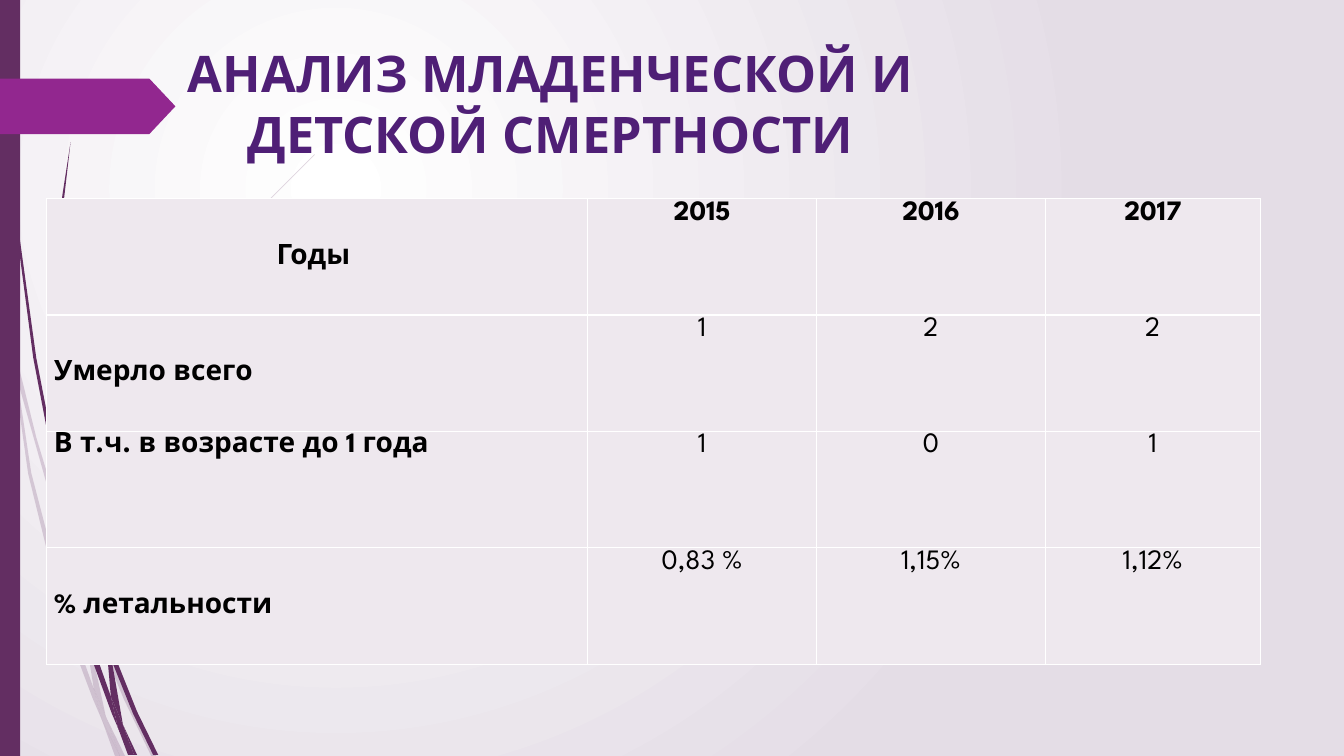
from dataclasses import dataclass

from lxml import etree
from pptx import Presentation
from pptx import util as u
from pptx.dml import color as col
from pptx.enum import shapes, text
from pptx.oxml import ns

Point = tuple[float, float]


@dataclass(frozen=True)
class Theme:
    font: str = "League Spartan"
    plum: str = "632E62"
    tag: str = "92278F"
    title: str = "4F1F76"
    ink: str = "000000"
    cell: str = "EEE8EE"
    white: str = "FFFFFF"
    mist: str = "E4DDE6"
    head: int = 36
    body: int = 20


@dataclass(frozen=True)
class Wisp:
    """A curved blade: one side going out, the other coming back."""
    out: list[Point]
    back: list[Point]


@dataclass(frozen=True)
class Row:
    label: str
    values: tuple[str, ...]
    mid: bool = True
    head: bool = False


THEME = Theme()

PALE = [
    Wisp([(0.11, 3.5), (0.09, 3.22), (0, 2.82)], [(0, 2.99), (0.1, 3.44)]),
    Wisp([(0.14, 3.45), (0.36, 4.34), (0.62, 5.2), (0.85, 5.86)],
         [(0.84, 5.99), (0.58, 5.22), (0.17, 3.76)]),
    Wisp([(0.88, 5.96), (0.92, 6.07), (1.27, 6.92), (1.55, 7.5)],
         [(1.5, 7.5), (1.23, 6.94), (0.88, 6.1)]),
    Wisp([(1.05, 7.11), (1.24, 7.5)], [(1.19, 7.5)]),
    Wisp([(0.11, 3.5), (0.17, 3.76), (0.31, 4.69), (0.7, 6.19), (0.93, 6.83), (1.01, 7.14)],
         [(0.92, 6.93), (0.65, 6.21), (0.28, 4.7)]),
    Wisp([(0.84, 5.99), (0.88, 6.08), (0.91, 6.46), (1.05, 7.11)],
         [(0.93, 6.83), (0.87, 6.46)]),
    Wisp([(0.88, 5.96), (0.88, 5.84), (1.1, 4.62), (1.6, 3.49), (2.29, 2.45), (2.68, 1.98), (3.12, 1.54)],
         [(3.12, 1.53), (2.68, 1.97), (2.28, 2.44), (1.58, 3.48), (1.07, 4.61), (0.85, 5.84)]),
    Wisp([(1.01, 7.14), (1.14, 7.5)], [(1.19, 7.5)]),
    Wisp([(0.88, 6.08), (0.88, 5.96), (0.85, 5.86)], [(0.84, 5.99)]),
    Wisp([(0.93, 6.83), (1.05, 7.11), (1.19, 7.5)], [(1.01, 7.14)]),
]
DARK = [
    Wisp([(0.03, 0), (0.07, 1.1), (0.17, 2.33), (0.33, 3.55), (0.57, 4.81)],
         [(0.55, 4.53), (0.36, 3.55), (0.19, 2.32), (0.08, 1.09), (0.04, 0)]),
    Wisp([(0.6, 4.72), (0.93, 5.9), (1.06, 6.31)],
         [(1.06, 6.45), (0.88, 5.92), (0.64, 5.05)]),
    Wisp([(1.1, 6.41), (1.36, 7.06), (1.57, 7.49)],
         [(1.52, 7.49), (1.32, 7.08), (1.11, 6.56)]),
    Wisp([(0.57, 4.77), (0.64, 5.05), (0.72, 5.56), (0.98, 6.57), (1.1, 6.91), (1.17, 7.22)],
         [(1.11, 7.08), (0.93, 6.59), (0.68, 5.57)]),
    Wisp([(0.6, 4.72), (0.54, 3.49), (0.58, 2.45), (0.7, 1.41)],
         [(0.62, 1.93), (0.56, 2.45), (0.52, 3.49), (0.55, 4.49)]),
    Wisp([(1.22, 7.19), (1.36, 7.49)], [(1.33, 7.49)]),
    Wisp([(0.55, 4.49), (0.6, 4.72), (0.64, 5.05)], [(0.57, 4.77)]),
    Wisp([(1.1, 6.41), (1.25, 5.52), (1.58, 4.76), (2.05, 4.06), (2.61, 3.44)],
         [(2.6, 3.44), (2.04, 4.05), (1.56, 4.74), (1.22, 5.51), (1.06, 6.31)]),
    Wisp([(1.17, 7.22), (1.31, 7.49)], [(1.27, 7.49)]),
    Wisp([(1.06, 6.45), (1.11, 6.56), (1.22, 7.19)], [(1.1, 6.91)]),
    Wisp([(1.06, 6.31), (1.1, 6.41), (1.11, 6.56)], [(1.06, 6.45)]),
    Wisp([(1.1, 6.91), (1.22, 7.19), (1.33, 7.49)], [(1.3, 7.49), (1.17, 7.22)]),
]
ROWS = [
    Row("Годы ", ("2015", "2016", "2017"), head=True),
    Row("Умерло всего", ("1", "2", "2")),
    Row("В т.ч. в возрасте до 1 года", ("1", "0", "1"), mid=False),
    Row("% летальности", ("0,83 %", "1,15%", "1,12%")),
]
COLS = (5.37, 2.27, 2.27, 2.13)


def rgb(code: str) -> col.RGBColor:
    return col.RGBColor.from_string(code)


def paint(shape, code: str) -> None:
    shape.fill.solid()
    shape.fill.fore_color.rgb = rgb(code)
    shape.line.fill.background()
    shape.shadow.inherit = False


def draw_wisp(slide, wisp: Wisp, alpha: int) -> None:
    pts = [(u.Inches(x), u.Inches(y)) for x, y in wisp.out + wisp.back]
    pen = slide.shapes.build_freeform(*pts[0])
    pen.add_line_segments(pts[1:], close=True)
    shape = pen.convert_to_shape()
    paint(shape, THEME.plum)
    if alpha < 100:
        tint = next(shape._element.spPr.iter(ns.qn("a:srgbClr")))
        etree.SubElement(tint, ns.qn("a:alpha"), val=str(alpha * 1000))


def draw_back(slide) -> None:
    fill = slide.background.fill
    fill.gradient()
    for stop, code in zip(fill.gradient_stops, (THEME.white, THEME.mist)):
        stop.color.rgb = rgb(code)
    line = next(slide._element.iter(ns.qn("a:lin")))
    ring = etree.Element(ns.qn("a:path"), {"path": "circle"})
    etree.SubElement(ring, ns.qn("a:fillToRect"), l="50000", t="50000", r="100000", b="100000")
    line.getparent().replace(line, ring)


def style(para, size: int, code: str, bold: bool, align) -> None:
    para.alignment = align
    font = para.font
    font.name, font.size, font.bold = THEME.font, u.Pt(size), bold
    font.color.rgb = rgb(code)


def fill_cell(cell, words: str, bold: bool, centre: bool, mid: bool) -> None:
    cell.text = words
    cell.margin_left = cell.margin_right = u.Inches(0.075)
    cell.margin_top = cell.margin_bottom = 0
    cell.vertical_anchor = text.MSO_ANCHOR.MIDDLE if mid else text.MSO_ANCHOR.TOP
    para = cell.text_frame.paragraphs[0]
    para.line_spacing = 1.07
    style(para, THEME.body, THEME.ink, bold, text.PP_ALIGN.CENTER if centre else text.PP_ALIGN.LEFT)
    props = cell._tc.get_or_add_tcPr()
    for side in ("lnL", "lnR", "lnT", "lnB"):
        edge = etree.SubElement(props, ns.qn(f"a:{side}"), w=str(u.Pt(1)))
        solid = etree.SubElement(edge, ns.qn("a:solidFill"))
        etree.SubElement(solid, ns.qn("a:srgbClr"), val=THEME.white)
    cell.fill.solid()
    cell.fill.fore_color.rgb = rgb(THEME.cell)


def draw_table(slide) -> None:
    high = 1.155
    grid = slide.shapes.add_table(
        len(ROWS), len(COLS), u.Inches(0.46), u.Inches(1.97),
        u.Inches(sum(COLS)), u.Inches(high * len(ROWS))).table
    grid.first_row = grid.horz_banding = False
    for column, wide in zip(grid.columns, COLS):
        column.width = u.Inches(wide)
    for r, row in enumerate(ROWS):
        fill_cell(grid.cell(r, 0), row.label, True, row.head, row.mid)
        for c, value in enumerate(row.values, 1):
            fill_cell(grid.cell(r, c), value, row.head, True, False)


def draw_title(slide) -> None:
    title = slide.shapes.title
    title.left, title.top, title.width, title.height = map(u.Inches, (0.76, 0.37, 9.4, 1.44))
    frame = title.text_frame
    frame.text = "АНАЛИЗ МЛАДЕНЧЕСКОЙ И ДЕТСКОЙ СМЕРТНОСТИ"
    frame.word_wrap, frame.auto_size = True, text.MSO_AUTO_SIZE.NONE
    frame.vertical_anchor = text.MSO_ANCHOR.TOP
    style(frame.paragraphs[0], THEME.head, THEME.title, True, text.PP_ALIGN.CENTER)
    slide.shapes._spTree.append(title._element)


def main() -> None:
    deck = Presentation()
    deck.slide_width, deck.slide_height = u.Inches(13.33), u.Inches(7.5)
    slide = deck.slides.add_slide(deck.slide_layouts[5])
    draw_back(slide)
    # Wisps, side bar and tag
    for wisps, alpha in ((PALE, 20), (DARK, 100)):
        for wisp in wisps:
            draw_wisp(slide, wisp, alpha)
    bar = slide.shapes.add_shape(shapes.MSO_SHAPE.RECTANGLE, 0, 0, u.Inches(0.2), u.Inches(7.5))
    paint(bar, THEME.plum)
    tag = slide.shapes.add_shape(
        shapes.MSO_SHAPE.PENTAGON, 0, u.Inches(0.78), u.Inches(1.74), u.Inches(0.55))
    tag.adjustments[0] = 0.47
    paint(tag, THEME.tag)
    # Title and figures
    draw_title(slide)
    draw_table(slide)
    deck.save("out.pptx")


if __name__ == "__main__":
    main()
